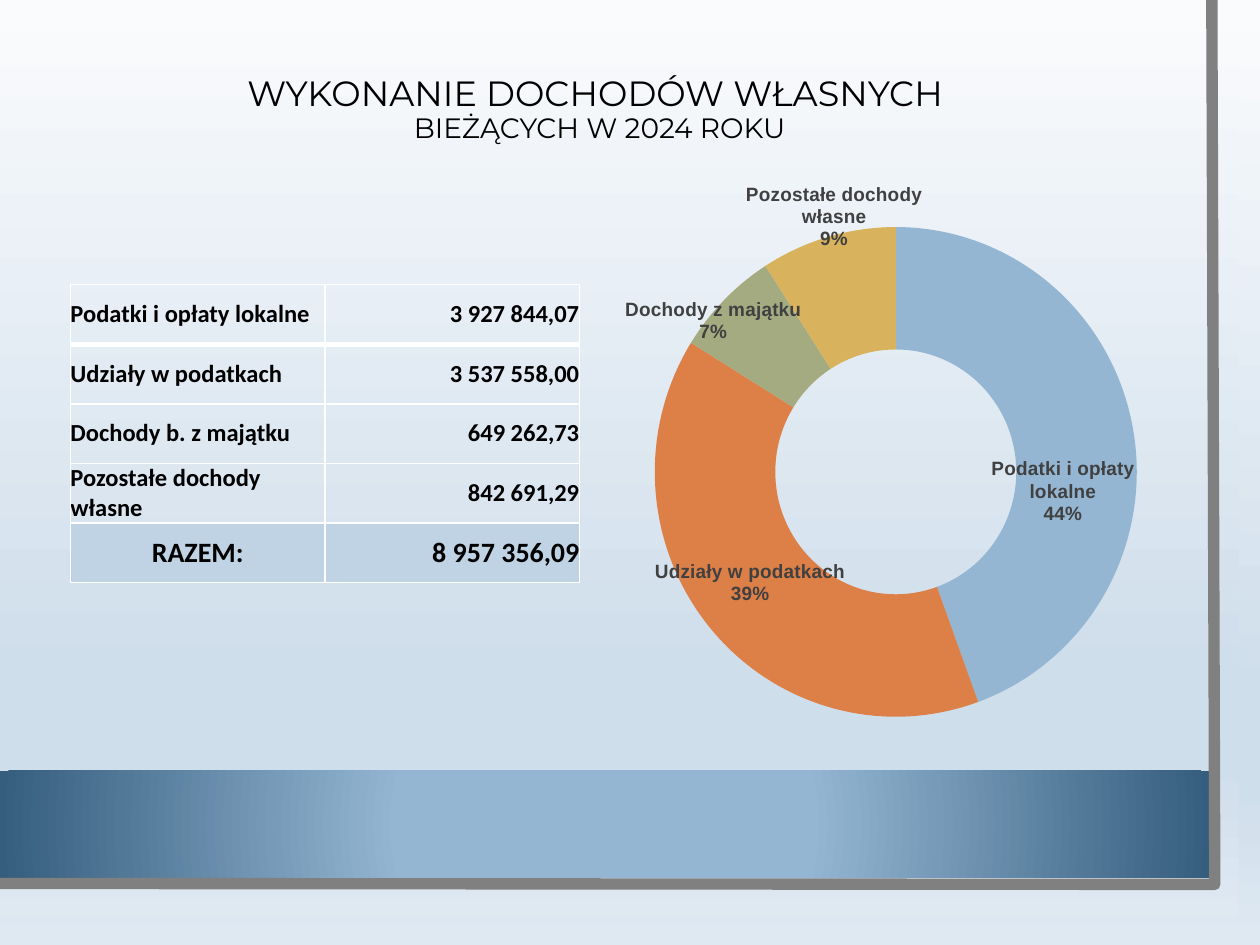
from lxml import etree
from pptx import Presentation
from pptx.chart.data import CategoryChartData
from pptx.dml.color import RGBColor
from pptx.enum.chart import XL_CHART_TYPE
from pptx.enum.shapes import MSO_SHAPE
from pptx.enum.text import MSO_ANCHOR, MSO_AUTO_SIZE, PP_ALIGN
from pptx.oxml.ns import qn
from pptx.util import Cm, Pt

LEFT, CENTER, RIGHT = PP_ALIGN.LEFT, PP_ALIGN.CENTER, PP_ALIGN.RIGHT
MIDDLE = MSO_ANCHOR.MIDDLE
RECTANGLE = MSO_SHAPE.RECTANGLE
DOUGHNUT = XL_CHART_TYPE.DOUGHNUT

HEADING = [("WYKONANIE DOCHODÓW WŁASNYCH ", 20), ("BIEŻĄCYCH W 2024 ROKU", 16)]
INCOME = [
    ("Podatki i opłaty lokalne", "3 927 844,07"),
    ("Udziały w podatkach", "3 537 558,00"),
    ("Dochody b. z majątku", "649 262,73"),
    ("Pozostałe dochody własne", "842 691,29"),
    ("RAZEM:", "8 957 356,09"),
]
SHARES = [
    ("Podatki i opłaty lokalne", 44, "94B6D2", (-0.02, 0.09)),
    ("Udziały w podatkach", 39, "DD8047", (-0.01, -0.01)),
    ("Dochody z majątku", 7, "A5AB81", (-0.1, -0.04)),
    ("Pozostałe dochody własne", 9, "D8B25C", (-0.02, -0.14)),
]
SKY = [(0, "FAFBFD"), (74, "CFDEEB"), (83, "CFDEEB"), (100, "DFE9F2")]
BAND = [(34, "94B6D2"), (100, "355D7E")]
FRAME = [(24.43, 0), (24.49, 17.83), (-0.05, 17.81)]


def rgb(value):
    return RGBColor.from_string(value)


def style(font, name, size, color="000000", bold=False):
    font.name, font.size, font.bold = name, Pt(size), bold
    font.color.rgb = rgb(color)


def add(parent, tag, **attributes):
    return etree.SubElement(parent, qn(tag), attributes)


def set_gradient(properties, stops, radial=False):
    solid = properties.find(qn("a:solidFill"))
    gradient = etree.Element(qn("a:gradFill"), rotWithShape="1")
    stop_list = add(gradient, "a:gsLst")
    for position, color in stops:
        stop = add(stop_list, "a:gs", pos=str(position * 1000))
        add(stop, "a:srgbClr", val=color)
    if radial:
        circle = add(gradient, "a:path", path="circle")
        add(circle, "a:fillToRect", l="50000", t="50000", r="50000", b="50000")
    else:
        add(gradient, "a:lin", ang="5400000", scaled="0")
    properties.replace(solid, gradient)


def add_panel(slide, top, width, height, stops, radial=False):
    panel = slide.shapes.add_shape(RECTANGLE, 0, Cm(top), Cm(width), Cm(height))
    panel.shadow.inherit = False
    panel.fill.solid()
    panel.line.fill.background()
    set_gradient(panel._element.spPr, stops, radial)


def add_frame(slide):
    start, *corners = [(Cm(x), Cm(y)) for x, y in FRAME]
    builder = slide.shapes.build_freeform(*start)
    builder.add_line_segments(corners, close=False)
    frame = builder.convert_to_shape()
    frame.shadow.inherit = False
    frame.fill.background()
    frame.line.color.rgb = rgb("808080")
    frame.line.width = Pt(6.5)


def add_heading(slide):
    title = slide.shapes.title
    slide.shapes._spTree.append(title._element)
    title.left, title.top, title.width, title.height = Cm(1.09), Cm(1.32), Cm(22), Cm(1.8)
    box = title.text_frame
    box.text = "\v".join(line for line, size in HEADING)
    box.word_wrap = True
    box.auto_size = MSO_AUTO_SIZE.NONE
    box.vertical_anchor = MIDDLE
    heading = box.paragraphs[0]
    heading.alignment = CENTER
    heading.line_spacing = 0.9
    for run, (line, size) in zip(heading.runs, HEADING):
        style(run.font, "Montserrat", size)


def set_borders(cell, top, bottom):
    properties = cell._tc.get_or_add_tcPr()
    for side, width in (("L", 1), ("R", 1), ("T", top), ("B", bottom)):
        border = add(properties, f"a:ln{side}", w=str(Pt(width)))
        add(add(border, "a:solidFill"), "a:srgbClr", val="FFFFFF")


def add_income_table(slide):
    table = slide.shapes.add_table(
        len(INCOME), 2, Cm(1.42), Cm(5.74), Cm(10.26), Cm(6)
    ).table
    for row, entries in enumerate(INCOME):
        total = row == len(INCOME) - 1
        for column, entry in enumerate(entries):
            cell = table.cell(row, column)
            cell.text = entry
            cell.vertical_anchor = MIDDLE
            cell.margin_left = cell.margin_right = cell.margin_top = cell.margin_bottom = 0
            set_borders(cell, 3 if row == 1 else 1, 3 if row == 0 else 1)
            if total:
                cell.fill.solid()
                cell.fill.fore_color.rgb = rgb("BFD3E4")
            else:
                cell.fill.background()
            paragraph = cell.text_frame.paragraphs[0]
            paragraph.alignment = RIGHT if column else CENTER if total else LEFT
            style(paragraph.runs[0].font, "Calibri", 16 if total else 14, bold=True)


def manual_layout(**values):
    layout = etree.Element(qn("c:layout"))
    manual = add(layout, "c:manualLayout")
    for name, value in values.items():
        add(manual, f"c:{name}", val=str(value))
    return layout


def add_share_chart(slide):
    data = CategoryChartData()
    data.categories = [name for name, *_ in SHARES]
    data.add_series("Series 1", [share for _, share, *_ in SHARES])
    chart = slide.shapes.add_chart(
        DOUGHNUT, Cm(12.12), Cm(3.53), Cm(10.97), Cm(11.4), data
    ).chart
    chart.has_legend = chart.has_title = False
    style(chart.font, "Roboto Condensed", 10)
    plot = chart.plots[0]
    plot.vary_by_categories = True
    series = plot.series[0]
    for index, (_, _, color, _) in enumerate(SHARES):
        point = series.points[index]
        point.format.fill.solid()
        point.format.fill.fore_color.rgb = rgb(color)
        point.format.line.fill.background()
        style(point.data_label.font, "Arial", 11, "404040", True)

    labels = series._element.findall(".//" + qn("c:dLbl"))
    for label, (_, _, _, (x, y)) in zip(labels, SHARES):
        label.insert(1, manual_layout(x=x, y=y))
        for name, shown in (("showVal", "0"), ("showCatName", "1"), ("showPercent", "1")):
            label.find(qn(f"c:{name}")).set("val", shown)
        add(label, "c:separator").text = "\n"
    for leader in series._element.iter(qn("c:showLeaderLines")):
        leader.set("val", "0")

    area = chart._chartSpace.find(".//" + qn("c:plotArea"))
    for layout in area.findall(qn("c:layout")):
        area.remove(layout)
    area.insert(0, manual_layout(
        layoutTarget="inner", xMode="edge", yMode="edge", x=0.1, y=0.09, w=0.9, h=0.87
    ))


def main():
    deck = Presentation()
    deck.slide_width, deck.slide_height = Cm(25.4), Cm(19.05)
    slide = deck.slides.add_slide(deck.slide_layouts[5])
    slide.background.fill.solid()
    set_gradient(slide._element.find(".//" + qn("p:bgPr")), SKY)
    add_panel(slide, 0, 24.97, 18.47, SKY)
    add_panel(slide, 15.54, 24.38, 2.16, BAND, radial=True)
    add_frame(slide)
    add_heading(slide)
    add_income_table(slide)
    add_share_chart(slide)
    deck.save("out.pptx")


if __name__ == "__main__":
    main()
